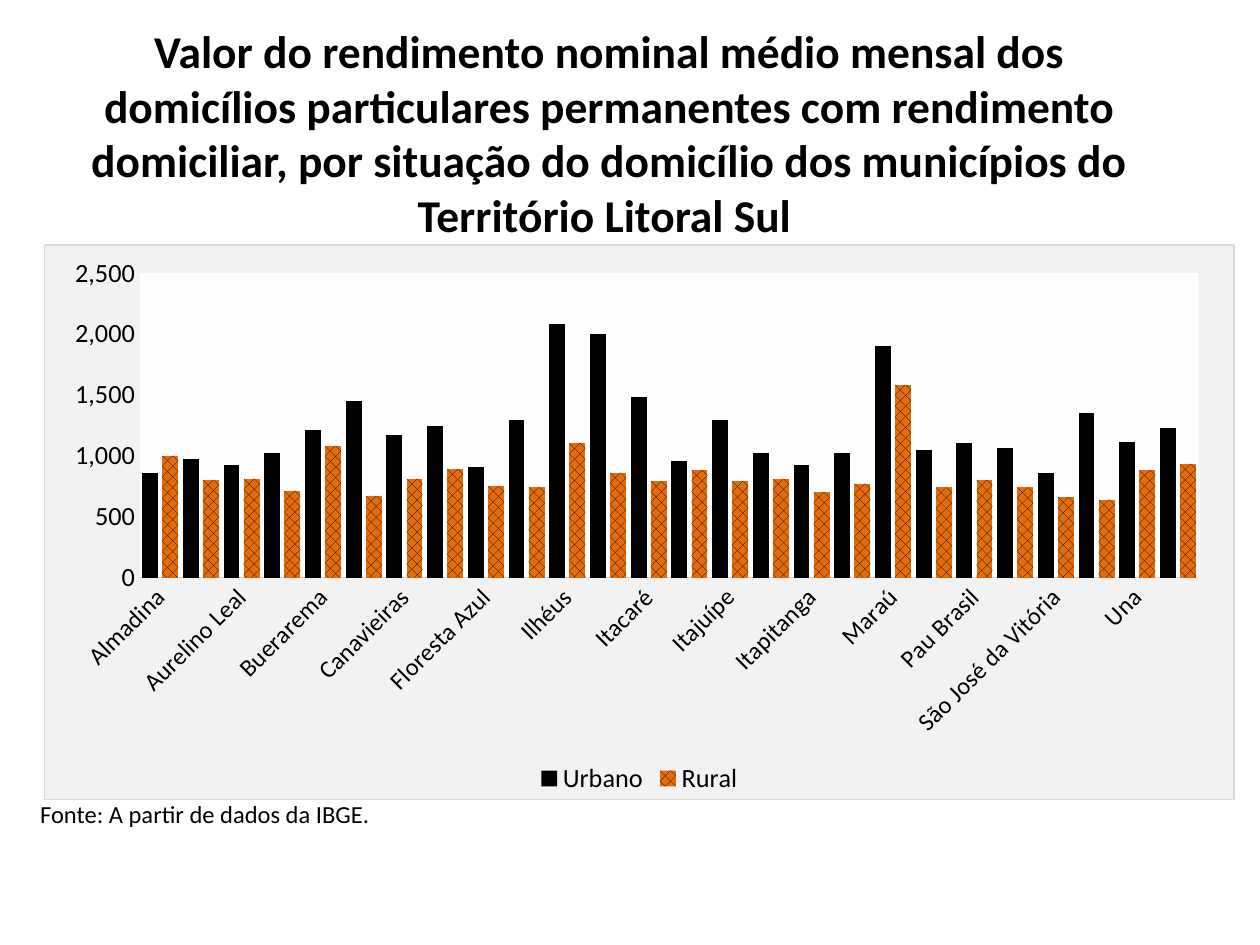
"""Build a slide charting household income by municipality."""
from lxml import etree
from pptx import Presentation
from pptx.chart.data import CategoryChartData
from pptx.dml.color import RGBColor
from pptx.enum.chart import XL_CHART_TYPE, XL_LEGEND_POSITION, XL_TICK_MARK
from pptx.enum.dml import MSO_PATTERN
from pptx.enum.text import MSO_ANCHOR, MSO_AUTO_SIZE, PP_ALIGN
from pptx.oxml import parse_xml
from pptx.oxml.ns import qn
from pptx.util import Inches, Pt

COLUMN = XL_CHART_TYPE.COLUMN_CLUSTERED
BOTTOM = XL_LEGEND_POSITION.BOTTOM
NO_TICK = XL_TICK_MARK.NONE
DOTS = MSO_PATTERN.from_xml("pct40")
MIDDLE, TOP = MSO_ANCHOR.MIDDLE, MSO_ANCHOR.TOP
CENTER, LEFT = PP_ALIGN.CENTER, PP_ALIGN.LEFT
FIXED = MSO_AUTO_SIZE.NONE

TITLE = ("Valor do rendimento nominal médio mensal dos domicílios particulares "
         "permanentes com rendimento domiciliar, por situação do domicílio dos "
         "municípios do Território Litoral Sul ")
SOURCE = "Fonte: A partir de dados da IBGE."
SERIES = ("Urbano", "Rural")
INCOME = [
    ("Almadina", 860, 1000),
    ("Arataca", 970, 800),
    ("Aurelino Leal", 920, 810),
    ("Barro Preto", 1020, 710),
    ("Buerarema", 1210, 1080),
    ("Camacan", 1450, 670),
    ("Canavieiras", 1170, 810),
    ("Coaraci", 1240, 890),
    ("Floresta Azul", 910, 750),
    ("Ibicaraí", 1290, 740),
    ("Ilhéus", 2080, 1100),
    ("Itabuna", 2000, 860),
    ("Itacaré", 1480, 790),
    ("Itaju do Colônia", 960, 880),
    ("Itajuípe", 1290, 790),
    ("Itapé", 1020, 810),
    ("Itapitanga", 920, 700),
    ("Jussari", 1020, 770),
    ("Maraú", 1900, 1580),
    ("Mascote", 1050, 740),
    ("Pau Brasil", 1100, 800),
    ("Santa Luzia", 1060, 740),
    ("São José da Vitória", 860, 660),
    ("Ubaitaba", 1350, 640),
    ("Una", 1110, 880),
    ("Uruçuca", 1230, 930),
]
THEME = {
    "font": "Calibri", "ink": "000000", "rural": "E46C0A", "panel": "F2F2F2",
    "plot": "FFFFFF", "rule": "D9D9D9",
    "title": 26, "label": 15, "names": 14, "note": 14,
}
PLOT = {"x": 0.08, "y": 0.05, "w": 0.89, "h": 0.55}
C_NS = "http://schemas.openxmlformats.org/drawingml/2006/chart"
A_NS = "http://schemas.openxmlformats.org/drawingml/2006/main"


def color(key):
    return RGBColor.from_string(THEME[key])


def style(font, size, bold=False):
    font.name, font.size, font.bold = THEME["font"], Pt(THEME[size]), bold
    font.color.rgb = color("ink")


def place(shape, left, top, width, height):
    shape.left, shape.top = Inches(left), Inches(top)
    shape.width, shape.height = Inches(width), Inches(height)


def write(shape, text, size, bold=False, align=LEFT, anchor=TOP):
    frame = shape.text_frame
    frame.word_wrap, frame.auto_size = True, FIXED
    frame.vertical_anchor = anchor
    para = frame.paragraphs[0]
    para.alignment = align
    run = para.add_run()
    run.text = text
    style(run.font, size, bold)


def panel(fill, alpha, line):
    return parse_xml(
        f'<c:spPr xmlns:c="{C_NS}" xmlns:a="{A_NS}"><a:solidFill>'
        f'<a:srgbClr val="{THEME[fill]}"><a:alpha val="{alpha * 1000}"/></a:srgbClr>'
        f'</a:solidFill>{line}</c:spPr>')


def frame_chart(chart):
    space = chart.element if hasattr(chart, "element") else chart._chartSpace
    edge = (f'<a:ln w="{int(Pt(0.75))}"><a:solidFill><a:srgbClr val="{THEME["rule"]}"/>'
            '</a:solidFill></a:ln>')
    space.find(qn("c:chart")).addnext(panel("panel", 100, edge))
    area = space.find(".//" + qn("c:plotArea"))
    area.append(panel("plot", 96, "<a:ln><a:noFill/></a:ln>"))
    for old in area.findall(qn("c:layout")):
        area.remove(old)
    layout = etree.Element(qn("c:layout"))
    manual = etree.SubElement(layout, qn("c:manualLayout"))
    rules = {"layoutTarget": "inner", "xMode": "edge", "yMode": "edge", **PLOT}
    for tag, val in rules.items():
        etree.SubElement(manual, qn("c:" + tag)).set("val", str(val))
    area.insert(0, layout)


def add_income(slide):
    data = CategoryChartData(number_format="#,##0")
    names, *columns = zip(*INCOME)
    data.categories = names
    for name, vals in zip(SERIES, columns):
        data.add_series(name, vals)
    box = [Inches(n) for n in (0.35, 1.94, 9.45, 4.41)]
    chart = slide.shapes.add_chart(COLUMN, *box, data).chart
    style(chart.font, "label")
    chart.has_title = False
    chart.has_legend = True
    chart.legend.position = BOTTOM
    chart.legend.include_in_layout = False
    style(chart.legend.font, "label")
    bars = chart.plots[0]
    bars.gap_width, bars.overlap, bars.vary_by_categories = 30, -27, False
    urban, rural = (item.format.fill for item in bars.series)
    urban.solid()
    urban.fore_color.rgb = color("ink")
    rural.patterned()
    rural.pattern = DOTS
    rural.fore_color.rgb, rural.back_color.rgb = color("ink"), color("rural")
    cats, vals = chart.category_axis, chart.value_axis
    for axis, size in ((cats, "names"), (vals, "label")):
        axis.major_tick_mark = axis.minor_tick_mark = NO_TICK
        axis.has_major_gridlines = False
        style(axis.tick_labels.font, size)
    cats.format.line.color.rgb, cats.format.line.width = color("rule"), Pt(0.75)
    turn = cats._element.find(qn("c:txPr")).find(qn("a:bodyPr"))
    turn.set("rot", str(-45 * 60000))
    turn.set("vert", "horz")
    vals.format.line.fill.background()
    vals.minimum_scale, vals.maximum_scale, vals.major_unit = 0, 2500, 500
    vals.tick_labels.number_format = "#,##0"
    vals.tick_labels.number_format_is_linked = False
    frame_chart(chart)


def main():
    deck = Presentation()
    deck.slide_width, deck.slide_height = Inches(10), Inches(7.5)
    slide = deck.slides.add_slide(deck.slide_layouts[5])
    title = slide.shapes.title
    place(title, 0.35, 0.3, 8.98, 1.5)
    write(title, TITLE, "title", bold=True, align=CENTER, anchor=MIDDLE)
    add_income(slide)
    note = slide.shapes.add_textbox(0, 0, 0, 0)
    place(note, 0.22, 6.29, 9.25, 0.35)
    write(note, SOURCE, "note")
    deck.save("out.pptx")


if __name__ == "__main__":
    main()
